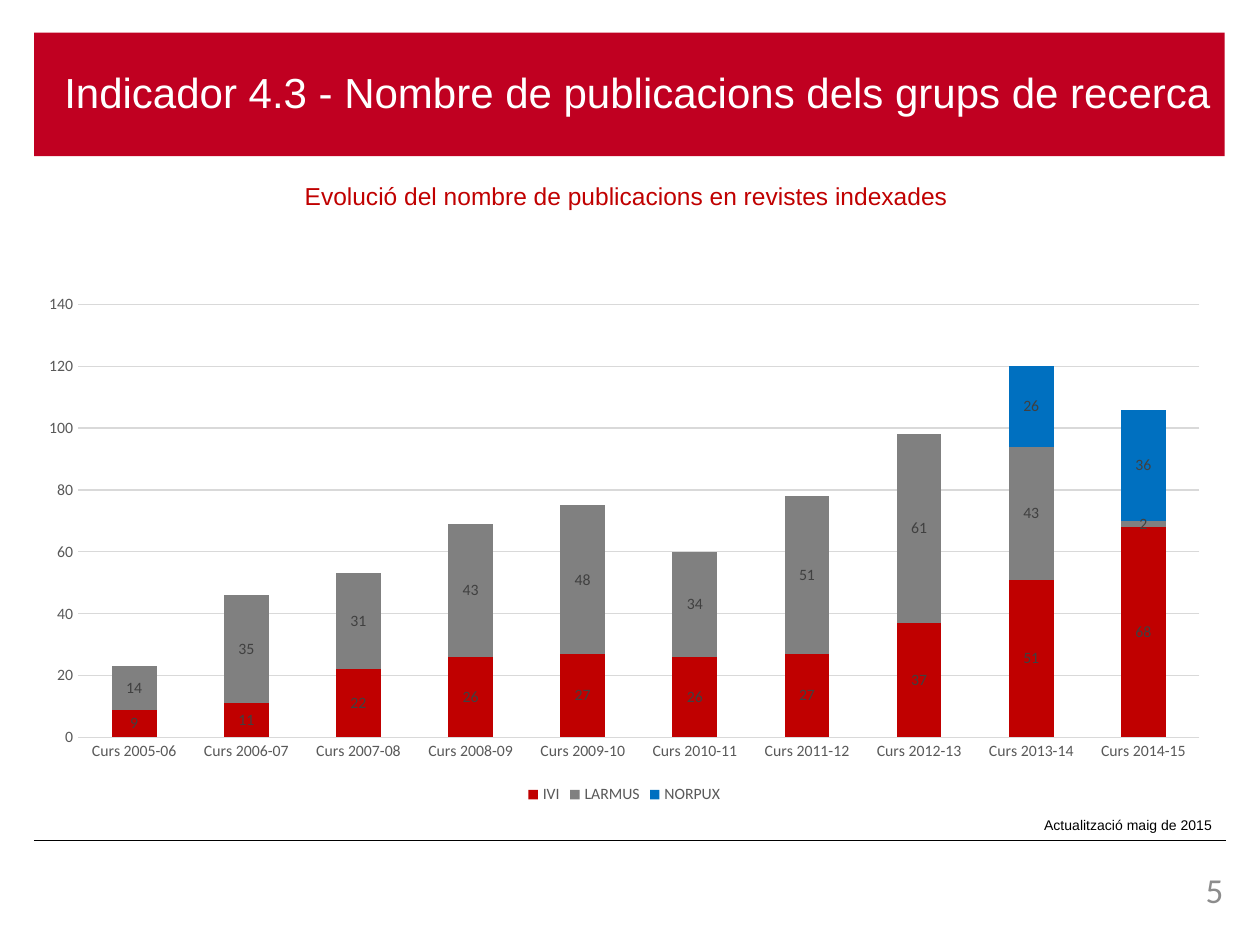
from lxml import etree
from pptx import Presentation
from pptx import util as u
from pptx.chart.data import CategoryChartData
from pptx.dml.color import RGBColor
from pptx.enum import chart as charts, shapes, text
from pptx.oxml.ns import qn

COLORS = {
    "banner": "C00021", "white": "FFFFFF", "black": "000000",
    "heading": "C00000", "number": "8C8C8C", "grid": "D9D9D9",
    "axis": "595959", "label": "404040",
}
SERIES = [
    ("IVI", "C00000", [9, 11, 22, 26, 27, 26, 27, 37, 51, 68]),
    ("LARMUS", "808080", [14, 35, 31, 43, 48, 34, 51, 61, 43, 2]),
    ("NORPUX", "0070C0", [None] * 8 + [26, 36]),
]
LEFT, RIGHT = text.PP_ALIGN.LEFT, text.PP_ALIGN.RIGHT


def color(name):
    return RGBColor.from_string(COLORS[name])


def style_font(font, size, color_name, name="Calibri"):
    font.size = u.Pt(size)
    font.name = name
    font.color.rgb = color(color_name)


def fill_frame(frame, words, size, color_name, align=LEFT, name="Arial",
               margins=(0.1, 0.05, 0.1, 0.05)):
    frame.word_wrap = True
    frame.auto_size = text.MSO_AUTO_SIZE.NONE
    (frame.margin_left, frame.margin_top,
     frame.margin_right, frame.margin_bottom) = map(u.Inches, margins)
    para = frame.paragraphs[0]
    para.alignment = align
    span = para.add_run()
    span.text = words
    style_font(span.font, size, color_name, name)
    return para


def add_title(page, words):
    title = page.shapes.title
    title.left, title.top, title.width, title.height = map(
        u.Inches, (0.27, 0.26, 9.45, 0.98))
    title.fill.solid()
    title.fill.fore_color.rgb = color("banner")
    para = fill_frame(title.text_frame, words, 24, "white",
                      margins=(0.24, 0.05, 0.1, 0.05))
    para.line_spacing = 0.9
    title.text_frame.vertical_anchor = text.MSO_ANCHOR.MIDDLE


def add_text(page, area, words, size, color_name, **options):
    box = page.shapes.add_textbox(*map(u.Inches, area))
    fill_frame(box.text_frame, words, size, color_name, **options)


def add_rule(page, left, right, top):
    rule = page.shapes.add_connector(
        shapes.MSO_CONNECTOR.STRAIGHT,
        u.Inches(left), u.Inches(top), u.Inches(right), u.Inches(top))
    rule.line.color.rgb = color("black")
    rule.line.width = u.Pt(0.5)
    etree.SubElement(rule._element.spPr, qn("a:effectLst"))


def style_line(line):
    line.color.rgb = color("grid")
    line.width = u.Pt(0.75)


def style_axes(chart):
    for axis in (chart.category_axis, chart.value_axis):
        axis.major_tick_mark = charts.XL_TICK_MARK.NONE
        axis.minor_tick_mark = charts.XL_TICK_MARK.NONE
        style_font(axis.tick_labels.font, 9, "axis")
    style_line(chart.category_axis.format.line)
    values = chart.value_axis
    values.minimum_scale, values.maximum_scale, values.major_unit = 0, 140, 20
    values.format.line.fill.background()
    style_line(values.major_gridlines.format.line)


def style_series(plot):
    for series, (_, fill, _) in zip(plot.series, SERIES):
        series.format.fill.solid()
        series.format.fill.fore_color.rgb = RGBColor.from_string(fill)
        labels = series.data_labels
        labels.show_value = True
        labels.position = charts.XL_LABEL_POSITION.CENTER
        style_font(labels.font, 9, "label")


def add_publications_chart(page):
    data = CategoryChartData()
    data.categories = [f"Curs {year}-{year % 100 + 1:02d}"
                       for year in range(2005, 2015)]
    for name, _, values in SERIES:
        data.add_series(name, values)
    area = map(u.Inches, (0.2, 2.26, 9.51, 4.16))
    chart = page.shapes.add_chart(
        charts.XL_CHART_TYPE.COLUMN_STACKED, *area, data).chart
    chart.has_title = False
    style_font(chart.font, 10, "black")
    chart.has_legend = True
    chart.legend.position = charts.XL_LEGEND_POSITION.BOTTOM
    chart.legend.include_in_layout = False
    style_font(chart.legend.font, 9, "axis")
    plot = chart.plots[0]
    plot.gap_width, plot.overlap = 150, 100
    plot.vary_by_categories = False
    style_axes(chart)
    style_series(plot)


def main():
    deck = Presentation()
    deck.slide_width, deck.slide_height = u.Inches(10), u.Inches(7.5)
    page = deck.slides.add_slide(deck.slide_layouts[5])
    add_rule(page, 0.27, 9.73, 6.67)
    add_title(page, "Indicador 4.3 - Nombre de publicacions dels grups de recerca")
    add_text(page, (2.32, 1.39, 5.43, 0.34),
             "Evolució del nombre de publicacions en revistes indexades",
             14, "heading")
    add_text(page, (7.91, 6.43, 1.81, 0.24), "Actualització maig de 2015",
             8, "black", align=RIGHT)
    add_text(page, (8.98, 6.89, 0.73, 0.4), "5", 20, "number",
             align=RIGHT, name="Calibri", margins=(0, 0, 0, 0))
    add_publications_chart(page)
    deck.save("out.pptx")


if __name__ == "__main__":
    main()
